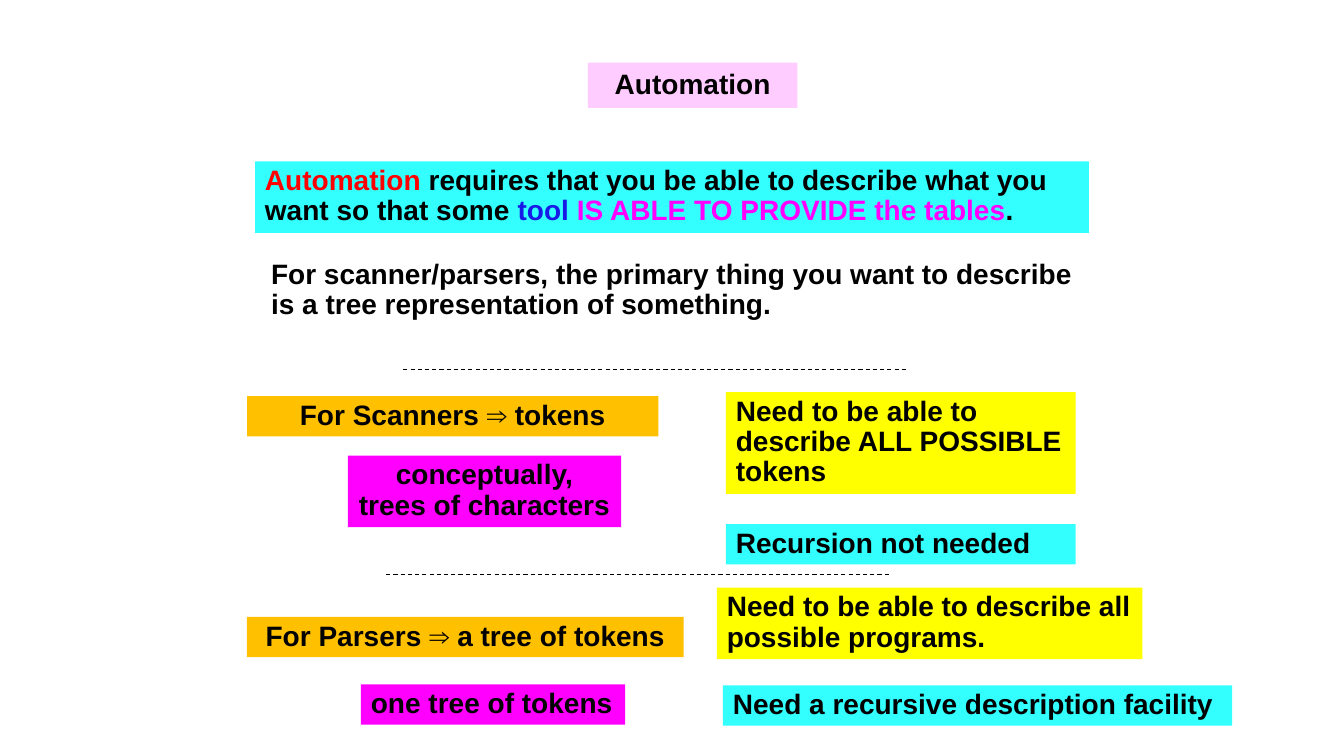
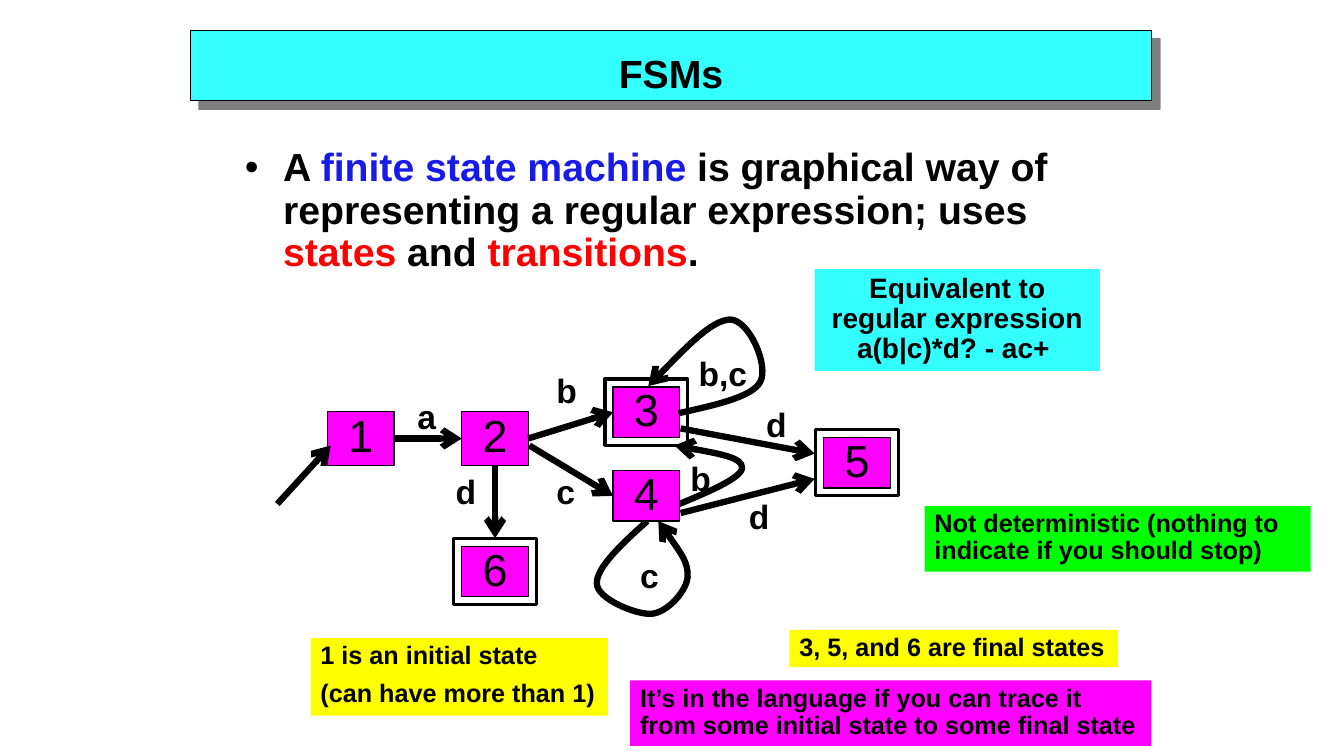
import dataclasses

import pptx
import pptx.dml.color
import pptx.enum.dml
import pptx.enum.shapes
import pptx.enum.text
import pptx.oxml
import pptx.oxml.ns
import pptx.util

Inches, Pt = pptx.util.Inches, pptx.util.Pt
LEFT = pptx.enum.text.PP_ALIGN.LEFT
MID = pptx.enum.text.PP_ALIGN.CENTER


@dataclasses.dataclass(frozen=True)
class Theme:
    font: str = "Arial"
    black: str = "000000"
    white: str = "FFFFFF"
    red: str = "FF0000"
    blue: str = "181BE5"
    cyan: str = "33FFFF"
    pink: str = "FFCCFF"
    gold: str = "FFC000"
    yellow: str = "FFFF00"
    purple: str = "FF00FF"
    green: str = "00FF00"
    note: int = 18
    text: int = 20
    label: int = 24
    head: int = 28
    state: int = 32
    tight: float = 0.9
    thin: float = 0.75
    edge: float = 1
    frame: float = 2.25
    arrow: float = 4.5


T = Theme()


# Content: a text is a list of paragraphs, a paragraph a list of (words, colour)
def plain(*lines):
    return [[(line, T.black)] for line in lines]


# Boxes: left, top, width, height, fill, align, wrap, text
CLAIM = [[("Automation", T.red),
          (" requires that you be able to describe what you want so that some ", T.black),
          ("tool ", T.blue), ("IS ABLE TO PROVIDE the tables", T.purple), (".", T.black)]]
NEEDS = [
    (2.53, 1.6, 8.27, 0.71, T.cyan, LEFT, True, CLAIM),
    (2.59, 2.53, 8.27, 0.71, None, LEFT, True, plain(
        "For scanner/parsers, the primary thing you want to describe "
        "is a tree representation of something.")),
    (2.45, 6.12, 4.33, 0.4, T.gold, MID, True, plain("For Parsers ⇒ a tree of tokens")),
    (2.45, 3.93, 4.08, 0.4, T.gold, MID, True, plain("For Scanners ⇒ tokens")),
    (7.11, 5.83, 4.22, 0.71, T.yellow, LEFT, True,
     plain("Need to be able to describe all possible programs.")),
    (7.17, 6.8, 5.05, 0.4, T.cyan, LEFT, True,
     plain("Need a recursive description facility")),
    (7.2, 3.89, 3.47, 1.01, T.yellow, LEFT, True,
     plain("Need to be able to describe ALL POSSIBLE tokens")),
    (3.58, 6.79, 2.62, 0.4, T.purple, LEFT, False, plain("one tree of tokens")),
    (3.45, 4.52, 2.71, 0.71, T.purple, MID, True,
     plain("conceptually,\ntrees of characters")),
    (7.2, 5.2, 3.47, 0.4, T.cyan, LEFT, True, plain("Recursion not needed")),
]
RULES = [(4, 3.67), (3.83, 5.7)]
RULE_W = 5

POINT = [[("A ", T.black), ("finite state machine ", T.blue),
          ("is graphical way of representing a regular expression; uses ", T.black),
          ("states", T.red), (" and ", T.black), ("transitions", T.red), (".", T.black)]]
EQUAL = (8.08, 2.67, 2.83, 1.01, T.cyan, MID, True,
         plain("Equivalent to regular expression a(b|c)*d? - ac+ "))
NOTES = [
    (3.08, 6.33, 2.95, 0.77, T.yellow, LEFT, False,
     plain("1 is an initial state", "(can have more than 1)")),
    (7.83, 6.25, 3.26, 0.37, T.yellow, LEFT, False, plain("3, 5, and 6 are final states")),
    (6.25, 6.75, 5.17, 0.65, T.purple, LEFT, True, plain(
        "It’s in the language if you can trace it from some initial state to some final state")),
    (9.17, 5.02, 3.83, 0.65, T.green, LEFT, True,
     plain("Not deterministic (nothing to indicate if you should stop)")),
]

# The machine: states are name, left, top, height, final
STATES = [("1", 3.25, 4.08, 0.54, False), ("2", 4.58, 4.08, 0.54, False),
          ("3", 6.08, 3.84, 0.5, True), ("4", 6.08, 4.67, 0.5, False),
          ("5", 8.17, 4.34, 0.5, True), ("6", 4.58, 5.42, 0.5, True)]
STATE_W, GAP = 0.66, 0.08
# Arrows: from, to, and the joined (state, side) at each end
ARROWS = [
    ((2.75, 5), (3.28, 4.42), None, None),
    ((3.91, 4.35), (4.58, 4.35), ("1", 3), ("2", 1)),
    ((4.91, 4.62), (4.91, 5.34), ("2", 2), ("6", 0)),
    ((5.24, 4.35), (6.08, 4.09), ("2", 3), ("3", 1)),
    ((5.25, 4.42), (6.08, 4.92), None, ("4", 1)),
    ((6.75, 4.25), (8.08, 4.5), None, None),
    ((6.75, 5.09), (8.08, 4.75), None, None),
]
# Loops: a start, then two control points and an end for each cubic curve
LOOPS = [
    [(6.73, 4.1), (7.09, 4.02), (7.46, 3.94), (7.54, 3.79),
     (7.63, 3.63), (7.43, 3.17), (7.24, 3.17), (7.06, 3.18), (6.74, 3.51), (6.43, 3.83)],
    [(6.69, 5.02), (7.03, 4.88), (7.36, 4.74), (7.36, 4.64),
     (7.36, 4.54), (7.03, 4.48), (6.69, 4.42)],
    [(6.42, 5.17), (6.16, 5.4), (5.91, 5.64), (5.92, 5.79),
     (5.92, 5.94), (6.31, 6.1), (6.46, 6.09), (6.61, 6.08), (6.8, 5.88), (6.82, 5.73),
     (6.83, 5.58), (6.68, 5.38), (6.53, 5.17)],
]
LABELS = [("a", 4.04, 3.92), ("b", 5.42, 3.67), ("c", 5.42, 4.67), ("d", 4.42, 4.67),
          ("b,c", 6.83, 3.5), ("b", 6.75, 4.54), ("c", 6.25, 5.5),
          ("d", 7.5, 4), ("d", 7.33, 4.92)]


# Shared helpers
def rgb(code):
    return pptx.dml.color.RGBColor.from_string(code)


def stroke(shape, width):
    shape.line.color.rgb = rgb(T.black)
    shape.line.width = Pt(width)


def paint(shape, fill=None, width=None):
    if fill:
        shape.fill.solid()
        shape.fill.fore_color.rgb = rgb(fill)
    else:
        shape.fill.background()
    if width:
        stroke(shape, width)
    else:
        shape.line.fill.background()


def add_xml(parent, body):
    root = pptx.oxml.parse_xml(f'<a:root {pptx.oxml.ns.nsdecls("a")}>{body}</a:root>')
    for node in list(root):
        parent.append(node)


def write(shape, text, size, align=LEFT, wrap=True, bold=True, space=T.tight, mid=False):
    frame = shape.text_frame
    frame.word_wrap = wrap
    frame.auto_size = pptx.enum.text.MSO_AUTO_SIZE.NONE
    anchor = pptx.enum.text.MSO_ANCHOR
    frame.vertical_anchor = anchor.MIDDLE if mid else anchor.TOP
    for i, runs in enumerate(text):
        para = frame.add_paragraph() if i else frame.paragraphs[0]
        para.alignment, para.line_spacing = align, space
        if i:
            para.space_before = Pt(0.4 * size)
        for words, color in runs:
            for j, part in enumerate(words.split("\n")):
                if j:
                    para.add_line_break()
                run = para.add_run()
                run.text = part
                run.font.name, run.font.size, run.font.bold = T.font, Pt(size), bold
                run.font.color.rgb = rgb(color)


def add_box(slide, box, size):
    *rect, fill, align, wrap, text = box
    shape = slide.shapes.add_textbox(*map(Inches, rect))
    paint(shape, fill)
    write(shape, text, size, align, wrap)
    return shape


def add_rect(slide, rect, fill, width):
    kind = pptx.enum.shapes.MSO_SHAPE.RECTANGLE
    shape = slide.shapes.add_shape(kind, *map(Inches, rect))
    shape.shadow.inherit = False
    paint(shape, fill, width)
    return shape


def add_line(slide, start, end, width):
    kind = pptx.enum.shapes.MSO_CONNECTOR.STRAIGHT
    line = slide.shapes.add_connector(kind, *map(Inches, start + end))
    stroke(line, width)
    add_xml(line._element.spPr, "<a:effectLst/>")
    return line


def add_head(shape):
    add_xml(shape.line._get_or_add_ln(), '<a:tailEnd type="arrow"/>')


def add_loop(slide, knots):
    first, *rest = [tuple(map(Inches, knot)) for knot in knots]
    pen = slide.shapes.build_freeform(*first)
    pen.add_line_segments(rest, close=False)
    loop = pen.convert_to_shape()
    # Turn each three straight steps into one cubic curve
    track = loop._element.xpath(".//a:path")[0]
    steps = track.xpath("a:lnTo")
    for k in range(0, len(steps), 3):
        add_xml(track, "<a:cubicBezTo/>")
        for step in steps[k:k + 3]:
            track[-1].append(step[0])
            track.remove(step)
    loop.shadow.inherit = False
    paint(loop, None, T.arrow)
    add_head(loop)


def add_page(deck, title, rect, fill, size, space=T.tight, width=None):
    slide = deck.slides.add_slide(deck.slide_layouts[5])
    head = slide.shapes.title
    head.left, head.top, head.width, head.height = map(Inches, rect)
    paint(head, fill, width)
    write(head, plain(title), size, MID, space=space, mid=True)
    return slide


# Slide builders
def build_needs(deck):
    slide = add_page(deck, "Automation", (5.83, 0.62, 2.08, 0.45), T.pink, T.text)
    for box in NEEDS:
        add_box(slide, box, T.text)
    for x, y in RULES:
        rule = add_line(slide, (x, y), (x + RULE_W, y), T.thin)
        rule.line.dash_style = pptx.enum.dml.MSO_LINE.DASH


def build_graph(slide):
    nodes, rims = {}, {}
    for name, x, y, h, final in STATES:
        if final:
            rim = (x - GAP, y - GAP, STATE_W + 2 * GAP, h + 2 * GAP)
            rims[name] = add_rect(slide, rim, T.white, T.frame)
        nodes[name] = add_rect(slide, (x, y, STATE_W, h), T.purple, T.edge)
        write(nodes[name], plain(name), T.state, MID, False, False, mid=True)
    for start, end, tail, tip in ARROWS:
        line = add_line(slide, start, end, T.arrow)
        if tail:
            line.begin_connect(nodes[tail[0]], tail[1])
        if tip:
            # A downward arrow stops at the rim of a final state
            name, side = tip
            line.end_connect(rims[name] if side == 0 else nodes[name], side)
        add_head(line)
    for knots in LOOPS:
        add_loop(slide, knots)
    # State 4 covers the start of its own loop
    slide.shapes._spTree.append(nodes["4"]._element)
    for words, x, y in LABELS:
        wide = 1.17 if len(words) > 1 else 0.39
        add_box(slide, (x, y, wide, 0.47, None, LEFT, True, plain(words)), T.label)


def build_machine(deck):
    slide = add_page(deck, "FSMs", (1.89, 0.3, 9.53, 0.7), T.cyan, T.head, 1.3, T.edge)
    add_xml(slide.shapes.title._element.spPr,
            '<a:effectLst><a:outerShdw dist="107950" dir="2700000" algn="ctr" rotWithShape="0">'
            f'<a:srgbClr val="{T.black}"><a:alpha val="50000"/></a:srgbClr>'
            '</a:outerShdw></a:effectLst>')
    body = add_box(slide, (2.33, 1.42, 8.94, 1.37, None, LEFT, True, POINT), T.head)
    props = body.text_frame.paragraphs[0]._p.get_or_add_pPr()
    props.set("marL", str(Inches(0.38)))
    props.set("indent", str(Inches(-0.38)))
    add_xml(props, f'<a:buClr><a:srgbClr val="{T.black}"/></a:buClr>'
                   f'<a:buFont typeface="{T.font}"/><a:buChar char="•"/>')
    build_graph(slide)
    add_box(slide, EQUAL, T.text)
    for box in NOTES:
        add_box(slide, box, T.note)


def main():
    deck = pptx.Presentation()
    deck.slide_width, deck.slide_height = Inches(13.33), Inches(7.5)
    build_needs(deck)
    build_machine(deck)
    deck.save("out.pptx")


if __name__ == "__main__":
    main()
